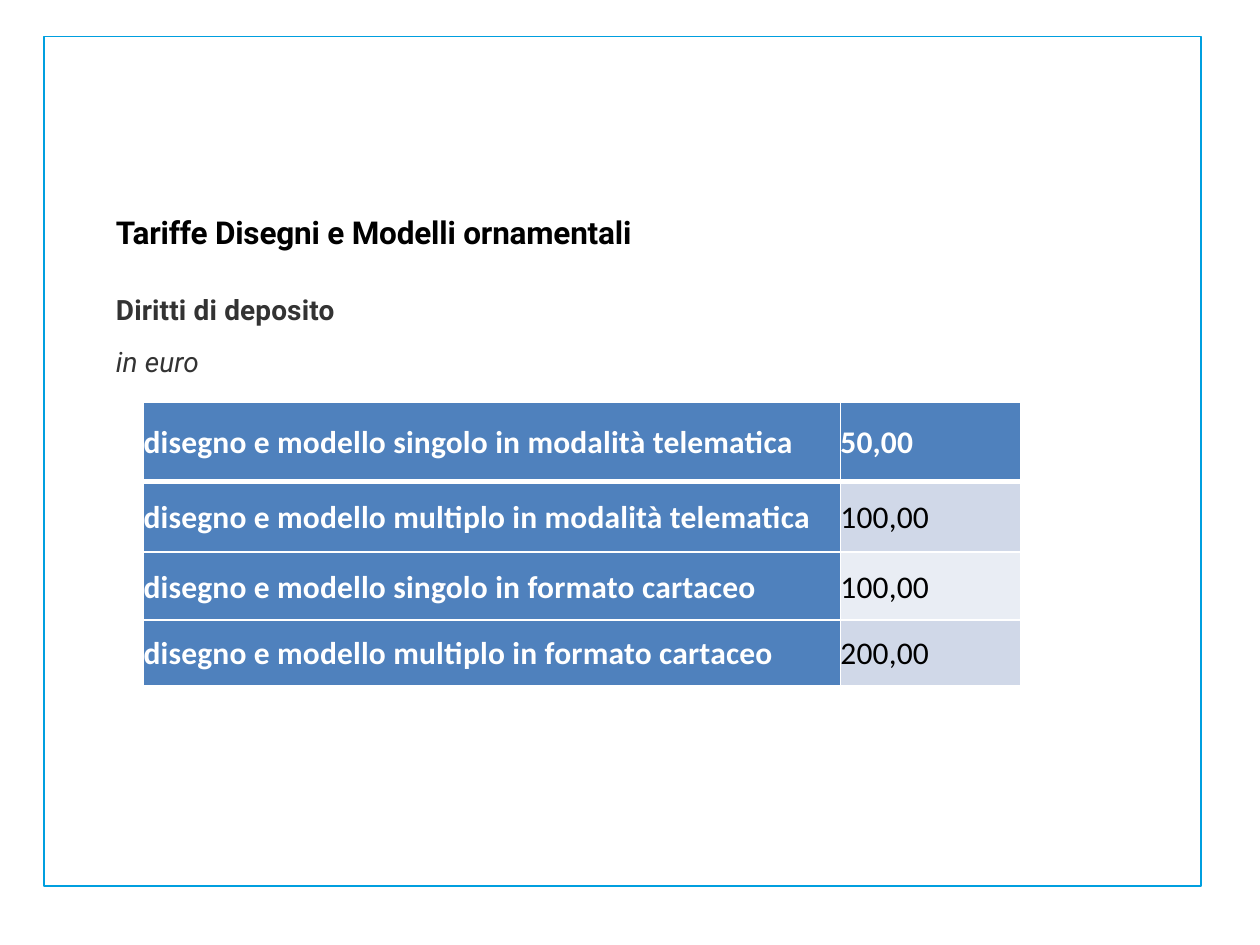
from lxml import etree
from pptx import Presentation
from pptx.dml.color import RGBColor
from pptx.enum.shapes import MSO_SHAPE
from pptx.enum.text import MSO_ANCHOR, MSO_AUTO_SIZE, PP_ALIGN
from pptx.oxml.ns import qn
from pptx.util import Inches, Pt

RECTANGLE = MSO_SHAPE.RECTANGLE
TOP, MIDDLE = MSO_ANCHOR.TOP, MSO_ANCHOR.MIDDLE
LEFT = PP_ALIGN.LEFT
FIT_SHAPE = MSO_AUTO_SIZE.SHAPE_TO_FIT_TEXT
TITLE_ONLY = 5

WHITE, BLACK, GREY = "FFFFFF", "000000", "333333"
HEADER_BLUE, FRAME_BLUE = "4F81BD", "009FDF"
BANDS = ("E9EDF4", "D0D8E8")
BODY_SPACING = {"line_spacing": 1.07, "space_after": Pt(9.4), "alignment": LEFT}

FEES = [
    ("disegno e modello singolo in modalità telematica", "50,00"),
    ("disegno e modello multiplo in modalità telematica", "100,00"),
    ("disegno e modello singolo in formato cartaceo", "100,00"),
    ("disegno e modello multiplo in formato cartaceo", "200,00"),
]
COLUMN_WIDTHS = (5.53, 1.43)
ROW_HEIGHTS = (0.63, 0.56, 0.54, 0.52)


def color(value):
    """Turn a hex string into a colour."""
    return RGBColor.from_string(value)


def set_attributes(target, values):
    """Set every attribute named in a dict."""
    for name, value in values.items():
        setattr(target, name, value)


def write_paragraph(paragraph, text, spacing, font, hex_color, tracking):
    """Write one formatted run, with tracking in hundredths of a point."""
    set_attributes(paragraph, spacing)
    run = paragraph.add_run()
    run.text = text
    set_attributes(run.font, font)
    run.font.color.rgb = color(hex_color)
    run.font._element.set("spc", str(tracking))


def add_border(cell, side, width):
    """Draw a white line on one side of a cell."""
    properties = cell._tc.get_or_add_tcPr()
    line = etree.SubElement(properties, qn(f"a:ln{side}"), w=str(Pt(width)))
    fill = etree.SubElement(line, qn("a:solidFill"))
    etree.SubElement(fill, qn("a:srgbClr"), val=WHITE)


def add_frame(slide, box):
    """Outline the page."""
    frame = slide.shapes.add_shape(RECTANGLE, *map(Inches, box))
    frame.shadow.inherit = False
    frame.fill.background()
    frame.line.color.rgb = color(FRAME_BLUE)
    frame.line.width = Pt(1)


def fill_heading(slide, box):
    """Place the title with its subtitle and unit line."""
    title = slide.shapes.title
    set_attributes(title, dict(zip(("left", "top", "width", "height"), map(Inches, box))))
    text_frame = title.text_frame
    set_attributes(text_frame, {
        "word_wrap": True, "auto_size": FIT_SHAPE, "vertical_anchor": TOP,
    })
    title_spacing = {"space_after": Pt(22.5), "alignment": LEFT}
    lines = [
        ("Tariffe Disegni e Modelli ornamentali", title_spacing, 18, True, False, BLACK, -10),
        ("Diritti di deposito", BODY_SPACING, 16, True, False, GREY, 10),
        ("in euro", BODY_SPACING, 16, False, True, GREY, 10),
    ]
    for index, (text, spacing, size, bold, italic, hex_color, tracking) in enumerate(lines):
        paragraph = text_frame.add_paragraph() if index else text_frame.paragraphs[0]
        font = {"name": "Roboto", "size": Pt(size), "bold": bold, "italic": italic}
        write_paragraph(paragraph, text, spacing, font, hex_color, tracking)


def add_fee_table(slide, box):
    """Place the table of filing fees."""
    table = slide.shapes.add_table(len(FEES), len(COLUMN_WIDTHS), *map(Inches, box)).table
    table.first_col = True
    for column, width in zip(table.columns, COLUMN_WIDTHS):
        column.width = Inches(width)
    for row, height in zip(table.rows, ROW_HEIGHTS):
        row.height = Inches(height)
    for row_index, fee in enumerate(FEES):
        for column_index, text in enumerate(fee):
            cell = table.cell(row_index, column_index)
            is_header = row_index == 0 or column_index == 0
            set_attributes(cell, {
                "margin_left": 0, "margin_right": 0, "margin_top": 0,
                "margin_bottom": 0, "vertical_anchor": MIDDLE,
            })
            for side in "LRTB":
                header_rule = (row_index, side) in ((0, "B"), (1, "T"))
                add_border(cell, side, 3 if header_rule else 1)
            cell.fill.solid()
            cell.fill.fore_color.rgb = color(HEADER_BLUE if is_header else BANDS[row_index % 2])
            font = {"name": "Calibri", "size": Pt(18), "bold": is_header}
            write_paragraph(cell.text_frame.paragraphs[0], text, BODY_SPACING, font,
                            WHITE if is_header else BLACK, 10)


def main():
    """Build and save the presentation."""
    presentation = Presentation()
    presentation.slide_width = Inches(10)
    presentation.slide_height = Inches(7.5)
    slide = presentation.slides.add_slide(presentation.slide_layouts[TITLE_ONLY])
    add_frame(slide, (0.35, 0.29, 9.18, 6.74))
    add_fee_table(slide, (1.14, 3.19, sum(COLUMN_WIDTHS), sum(ROW_HEIGHTS)))
    fill_heading(slide, (0.82, 1.64, 6.68, 1.42))
    presentation.save("out.pptx")


if __name__ == "__main__":
    main()
